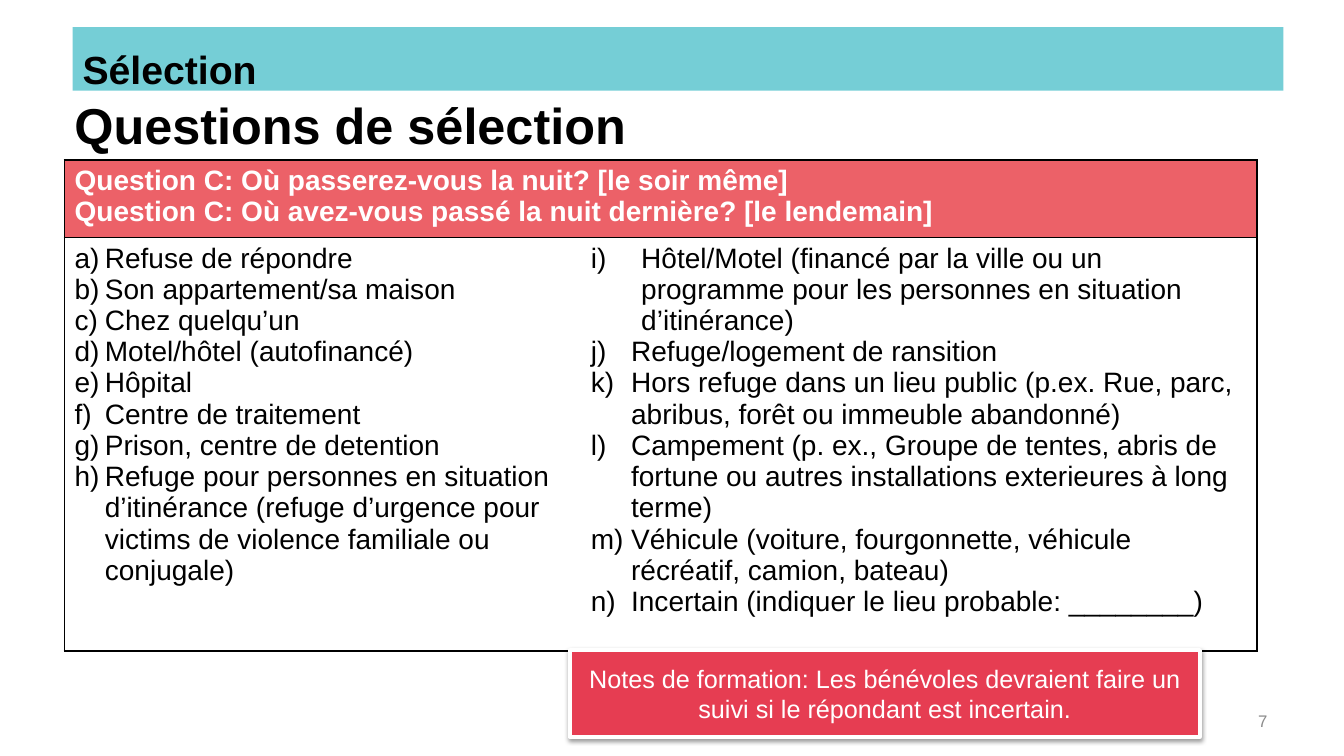
from lxml import etree
from pptx import Presentation
from pptx.dml.color import RGBColor
from pptx.enum.shapes import MSO_SHAPE
from pptx.enum.text import MSO_ANCHOR, PP_ALIGN
from pptx.oxml.ns import qn
from pptx.util import Inches, Pt

RECTANGLE = MSO_SHAPE.RECTANGLE
TOP, MIDDLE = MSO_ANCHOR.TOP, MSO_ANCHOR.MIDDLE
LEFT, CENTER, RIGHT = PP_ALIGN.LEFT, PP_ALIGN.CENTER, PP_ALIGN.RIGHT

COLORS = {"black": "000000", "white": "FFFFFF", "teal": "75CED6",
          "coral": "EC6168", "red": "E63D52", "gray": "8C8C8C"}
COLUMN_WIDTHS = [5.12, 6.71]
ROW_HEIGHTS = [0.72, 3.81]
QUESTIONS = ["Question C: Où passerez-vous la nuit? [le soir même]",
             "Question C: Où avez-vous passé la nuit dernière? [le lendemain]"]
# Each answer column: first number, indent of its first item, indent of the others, items
ANSWERS = [
    (1, 0.3, 0.3, [
        "Refuse de répondre",
        "Son appartement/sa maison",
        "Chez quelqu’un",
        "Motel/hôtel (autofinancé)",
        "Hôpital",
        "Centre de traitement",
        "Prison, centre de detention",
        "Refuge pour personnes en situation d’itinérance (refuge d’urgence pour "
        "victims de violence familiale ou conjugale)"]),
    (9, 0.5, 0.4, [
        "Hôtel/Motel (financé par la ville ou un programme pour les personnes "
        "en situation d’itinérance)",
        "Refuge/logement de ransition",
        "Hors refuge dans un lieu public (p.ex. Rue, parc, abribus, forêt ou "
        "immeuble abandonné)",
        "Campement (p. ex., Groupe de tentes, abris de fortune ou autres "
        "installations exterieures à long terme)",
        "Véhicule (voiture, fourgonnette, véhicule récréatif, camion, bateau)",
        "Incertain (indiquer le lieu probable: ________)"]),
]


def write(frame, lines, size, color, bold=False, align=LEFT, anchor=TOP):
    frame.text = "\n".join(lines)
    frame.word_wrap = True
    frame.vertical_anchor = anchor
    for para in frame.paragraphs:
        para.alignment = align
        for span in para.runs:
            span.font.name = "Arial"
            span.font.size = Pt(size)
            span.font.bold = bold
            span.font.color.rgb = RGBColor.from_string(COLORS[color])


def set_borders(cell, widths):
    """Draw black left, right, top and bottom borders; a width of 0 means none."""
    properties = cell._tc.get_or_add_tcPr()
    for position, (side, width) in enumerate(zip("LRTB", widths)):
        line = etree.Element(qn(f"a:ln{side}"), w=str(Pt(width)))
        if width:
            fill = etree.SubElement(line, qn("a:solidFill"))
            etree.SubElement(fill, qn("a:srgbClr"), val=COLORS["black"])
        else:
            etree.SubElement(line, qn("a:noFill"))
        properties.insert(position, line)


deck = Presentation()
deck.slide_width, deck.slide_height = Inches(13.33), Inches(7.5)
page = deck.slides.add_slide(deck.slide_layouts[6])

# Title and section band
title = page.shapes.add_textbox(Inches(0.64), Inches(0.85), Inches(8.88), Inches(0.77))
write(title.text_frame, ["Questions de sélection"], 36, "black", bold=True, anchor=MIDDLE)

band = page.shapes.add_shape(RECTANGLE, Inches(0.72), Inches(0.27), Inches(12.01), Inches(0.63))
band.shadow.inherit = False
band.fill.solid()
band.fill.fore_color.rgb = RGBColor.from_string(COLORS["teal"])
band.line.fill.background()
write(band.text_frame, ["Sélection"], 28, "black", bold=True)
band.text_frame.paragraphs[0].line_spacing = Pt(43.2)

# Question table
table = page.shapes.add_table(2, 2, Inches(0.64), Inches(1.59), Inches(sum(COLUMN_WIDTHS)),
                              Inches(sum(ROW_HEIGHTS))).table
table.first_row = table.horz_banding = False
for column, width in zip(table.columns, COLUMN_WIDTHS):
    column.width = Inches(width)
for row, height in zip(table.rows, ROW_HEIGHTS):
    row.height = Inches(height)

header = table.cell(0, 0)
header.merge(table.cell(0, 1))
write(header.text_frame, QUESTIONS, 20, "white", bold=True)
for cell in table.rows[0].cells:
    cell.fill.solid()
    cell.fill.fore_color.rgb = RGBColor.from_string(COLORS["coral"])
    set_borders(cell, [1.5, 1.5, 1.5, 1])

for index, (start, first_indent, indent, items) in enumerate(ANSWERS):
    cell = table.cell(1, index)
    write(cell.text_frame, items, 20, "black")
    cell.fill.background()
    set_borders(cell, [0, 1.5, 1, 1.5] if index else [1.5, 0, 1, 1.5])
    for number, para in enumerate(cell.text_frame.paragraphs):
        hanging = Inches(indent if number else first_indent)
        properties = para._p.get_or_add_pPr()
        properties.set("marL", str(hanging))
        properties.set("indent", str(-hanging))
        bullet = etree.SubElement(properties, qn("a:buAutoNum"), type="alphaLcParenR")
        if start > 1:
            bullet.set("startAt", str(start))

# Training note
note = page.shapes.add_shape(RECTANGLE, Inches(5.65), Inches(6.45), Inches(6.25), Inches(0.86))
note.shadow.inherit = False
note.fill.solid()
note.fill.fore_color.rgb = RGBColor.from_string(COLORS["red"])
note.line.color.rgb = RGBColor.from_string(COLORS["white"])
note.line.width = Pt(3)
write(note.text_frame, ["Notes de formation: Les bénévoles devraient faire un suivi si le "
                        "répondant est incertain."], 18, "white", align=CENTER, anchor=MIDDLE)
effects = note._element.spPr.find(qn("a:effectLst"))
shadow = etree.SubElement(effects, qn("a:outerShdw"), blurRad=str(Pt(3.1)), dist=str(Pt(1.6)),
                          dir=str(90 * 60000), rotWithShape="0")
shade = etree.SubElement(shadow, qn("a:srgbClr"), val=COLORS["black"])
etree.SubElement(shade, qn("a:alpha"), val="38000")

# Page number
page_number = page.shapes.add_textbox(Inches(9.56), Inches(6.95), Inches(3.11), Inches(0.4))
write(page_number.text_frame, ["7"], 12, "gray", align=RIGHT, anchor=MIDDLE)

deck.save("out.pptx")
